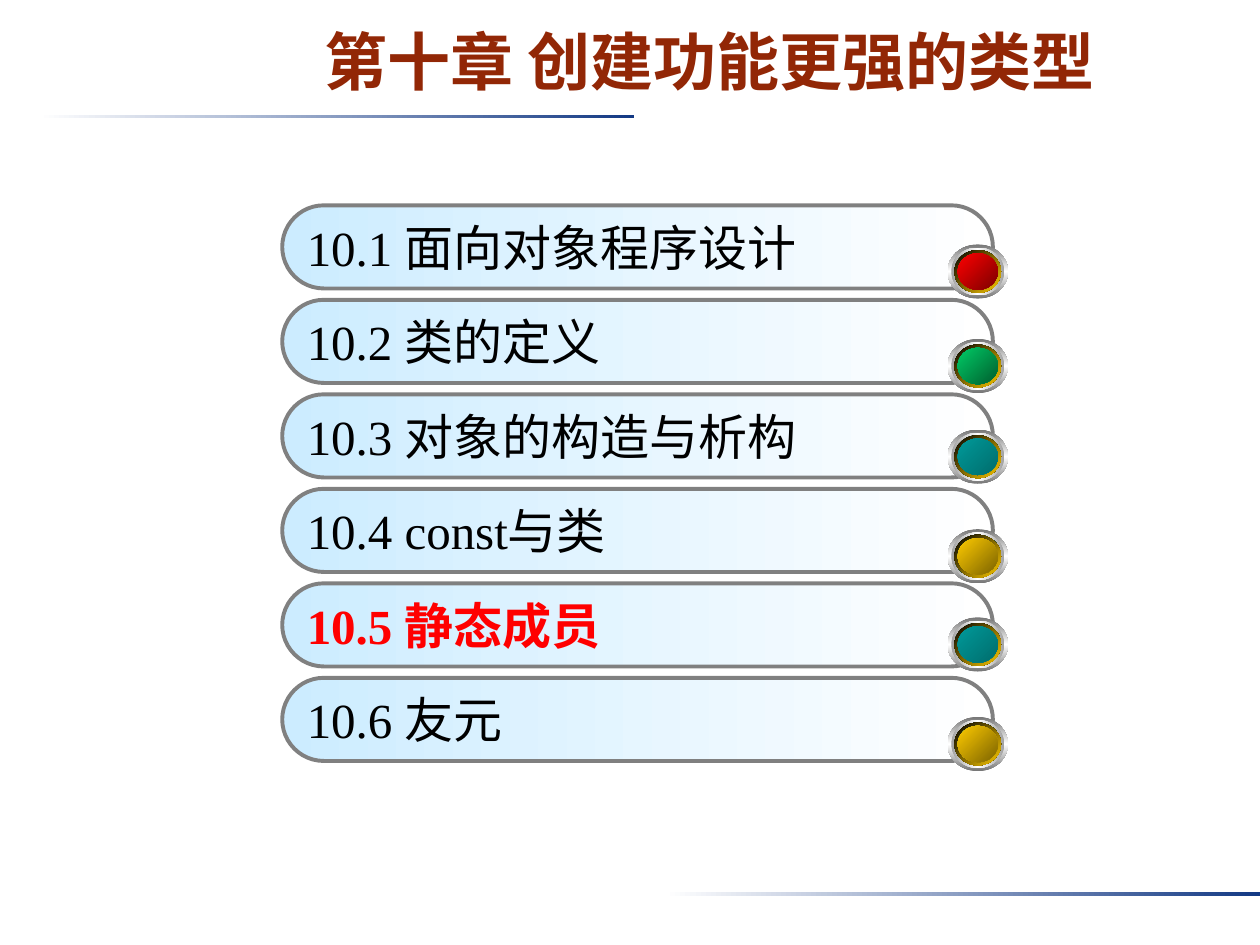
from copy import deepcopy

from pptx import Presentation
from pptx.dml.color import RGBColor
from pptx.enum.shapes import MSO_SHAPE
from pptx.enum.text import MSO_ANCHOR, PP_ALIGN
from pptx.util import Inches, Pt

RECT, ROUND, OVAL = MSO_SHAPE.RECTANGLE, MSO_SHAPE.ROUNDED_RECTANGLE, MSO_SHAPE.OVAL
LEFT, CENTER, MIDDLE = PP_ALIGN.LEFT, PP_ALIGN.CENTER, MSO_ANCHOR.MIDDLE

COLORS = {
    "white": "FFFFFF", "black": "000000", "navy": "133984", "title": "922706",
    "sky": "CCECFF", "edge": "808080", "steel": "767676", "silver": "A2A2A2",
    "teal": "009999", "pine": "007575", "deep": "006D6D",
    "gold": "FFCC00", "bronze": "7C6300", "green": "00CC66", "moss": "005E2F",
    "red": "FF0000", "wine": "7C0000",
}

# Width, height, gradient colours and angle of each disc, outermost first
RINGS = [
    (0.48, 0.43, ("steel", "white", "steel"), 90),
    (0.42, 0.38, ("silver", "white", "silver"), 0),
    (0.37, 0.34, ("white", "teal", "white"), 45),
    (0.37, 0.34, ("black", "gold"), 45),
    (0.32, 0.29, ("pine", "teal", "pine"), 315),
]

# Text, button top and button colours of each section
ITEMS = [
    ("10.1 面向对象程序设计", 1.94, ("red", "wine")),
    ("10.2 类的定义", 2.69, ("green", "moss")),
    ("10.3 对象的构造与析构", 3.41, ("teal", "deep")),
    ("10.4 const与类", 4.2, ("gold", "bronze")),
    ("10.5 静态成员", 4.9, ("teal", "deep")),
    ("10.6 友元", 5.69, ("gold", "bronze")),
]
ACTIVE = 4
TOP, PITCH = 1.63, 0.75


class Deck:
    def __init__(self):
        self.prs = Presentation()
        self.prs.slide_width, self.prs.slide_height = Inches(10), Inches(7.5)
        self.slide = self.prs.slides.add_slide(self.prs.slide_layouts[6])

    def color(self, name):
        return RGBColor.from_string(COLORS[name])

    def blend(self, item, names, angle):
        """Fill with evenly spaced colours, the angle counted clockwise."""
        fill = item.fill
        fill.gradient()
        fill.gradient_angle = -angle % 360
        stops = item.element.spPr.eg_fillProperties.gsLst
        for _ in names[2:]:
            stops.append(deepcopy(stops[-1]))
        for i, (stop, name) in enumerate(zip(fill.gradient_stops, names)):
            stop.position = i / (len(names) - 1)
            stop.color.rgb = self.color(name)

    def shape(self, kind, box, names, angle=0, parent=None):
        shapes = (parent or self.slide).shapes
        item = shapes.add_shape(kind, *map(Inches, box))
        item.shadow.inherit = False
        item.line.fill.background()
        self.blend(item, names, angle)
        return item

    def text(self, frame, words, font, size, color, bold, align):
        frame.word_wrap = True
        para = frame.paragraphs[0]
        para.alignment = align
        run = para.add_run()
        run.text = words
        run.font.name, run.font.size, run.font.bold = font, Pt(size), bold
        run.font.color.rgb = self.color(color)

    def title(self, words):
        box = self.slide.shapes.add_textbox(*map(Inches, (1.38, 0.12, 8.5, 0.82)))
        box.text_frame.margin_top = Inches(0.06)
        self.text(box.text_frame, words, "Arial", 36, "title", True, CENTER)

    def rule(self, left, top):
        self.shape(RECT, (left, top, 4.72, 0.03), ("white", "navy"))

    def bar(self, top, words, active):
        bar = self.shape(ROUND, (2.24, top, 5.64, 0.66), ("sky", "white"))
        bar.adjustments[0] = 0.5
        bar.line.color.rgb = self.color("edge")
        bar.line.width = Pt(2.25)
        bar.text_frame.vertical_anchor = MIDDLE
        self.text(bar.text_frame, words, "Times New Roman", 28,
                  "red" if active else "black", active, LEFT)

    def button(self, left, top, names):
        """Stack concentric discs, the coloured face on top."""
        group = self.slide.shapes.add_group_shape()
        wide, high = RINGS[0][:2]
        for w, h, tones, angle in RINGS + [(0.32, 0.29, names, 45)]:
            box = (left + (wide - w) / 2, top + (high - h) / 2, w, h)
            self.shape(OVAL, box, tones, angle, group)


def main():
    deck = Deck()
    deck.rule(0.31, 0.91)
    deck.rule(5.28, 7.08)
    deck.title("第十章 创建功能更强的类型")
    for i, (words, top, names) in enumerate(ITEMS):
        deck.bar(TOP + i * PITCH, words, i == ACTIVE)
        deck.button(7.52, top, names)
    deck.prs.save("out.pptx")


if __name__ == "__main__":
    main()
